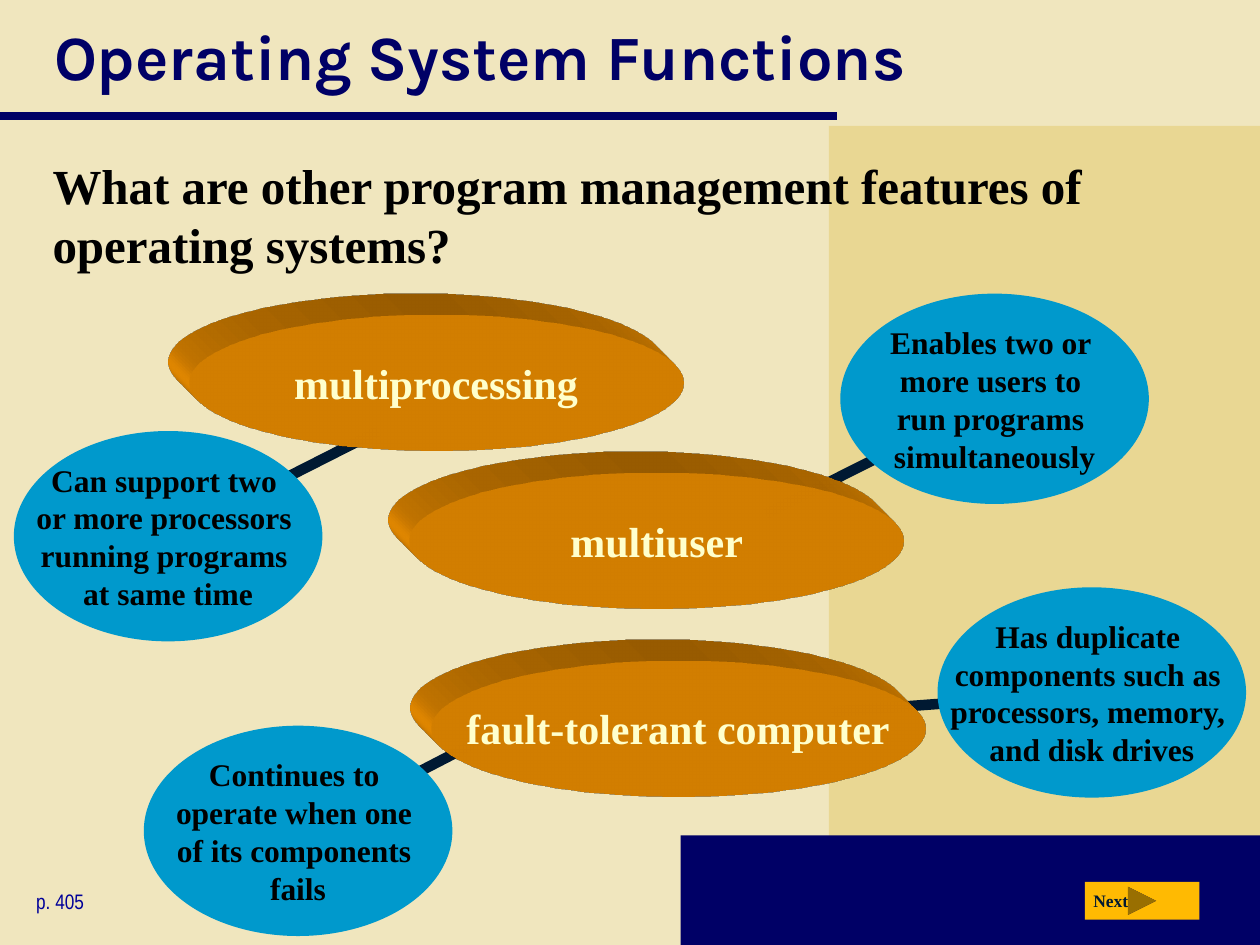
from dataclasses import dataclass

from lxml import etree
from pptx import Presentation
from pptx.dml.color import RGBColor
from pptx.enum.shapes import MSO_CONNECTOR, MSO_SHAPE
from pptx.enum.text import MSO_ANCHOR, PP_ALIGN
from pptx.oxml import parse_xml
from pptx.oxml.ns import qn
from pptx.util import Cm, Pt

RECTANGLE = MSO_SHAPE.RECTANGLE
ELLIPSE = MSO_SHAPE.OVAL
NEXT_BUTTON = MSO_SHAPE.ACTION_BUTTON_FORWARD_OR_NEXT
STRAIGHT = MSO_CONNECTOR.STRAIGHT
LEFT, CENTER = PP_ALIGN.LEFT, PP_ALIGN.CENTER
TOP, MIDDLE = MSO_ANCHOR.TOP, MSO_ANCHOR.MIDDLE

DRAWING = 'xmlns:a="http://schemas.openxmlformats.org/drawingml/2006/main"'
SCENE = f"""<a:scene3d {DRAWING}>
<a:camera prst="legacyObliqueTopLeft"/><a:lightRig rig="legacyFlat3" dir="b"/>
</a:scene3d>"""
EXTRUSION = """<a:sp3d {namespace} extrusionH="430200" prstMaterial="legacyMatte">
<a:bevelT w="13500" h="13500" prst="angle"/><a:bevelB w="13500" h="13500" prst="angle"/>
<a:extrusionClr><a:srgbClr val="{color}"/></a:extrusionClr></a:sp3d>"""


@dataclass(frozen=True)
class Theme:
    background: str = "F0E6BE"
    panel: str = "E9D793"
    navy: str = "000066"
    link: str = "001932"
    callout: str = "0099CC"
    feature: str = "FF9900"
    feature_text: str = "FFFFCC"
    button: str = "FFBA02"
    page: str = "000099"
    body: str = "000000"
    title_font: str = "Karla"
    body_font: str = "Times New Roman"
    page_font: str = "Arial Narrow"
    title_size: int = 36
    question_size: int = 28
    feature_size: int = 24
    callout_size: int = 18
    page_size: int = 12
    button_size: int = 10


THEME = Theme()


def write_text(shape, text, size, color=THEME.body, font=THEME.body_font, bold=True,
               align=LEFT, anchor=TOP, wrap=True, before=0.2):
    frame = shape.text_frame
    frame.word_wrap = wrap
    frame.vertical_anchor = anchor
    paragraph = frame.paragraphs[0]
    paragraph.text = text
    paragraph.alignment = align
    paragraph.space_before = Pt(size * before)
    for run in paragraph.runs:
        run.font.name = font
        run.font.size = Pt(size)
        run.font.bold = bold
        run.font.color.rgb = RGBColor.from_string(color)


class SlideBuilder:
    CALLOUT = (6.22, 4.24)
    FEATURE = (9.96, 2.74)

    def __init__(self, slide, theme):
        self.slide = slide
        self.theme = theme
        fill = slide.background.fill
        fill.solid()
        fill.fore_color.rgb = RGBColor.from_string(theme.background)

    def shape(self, kind, box, color):
        shape = self.slide.shapes.add_shape(kind, *map(Cm, box))
        shape.shadow.inherit = False
        shape.fill.solid()
        shape.fill.fore_color.rgb = RGBColor.from_string(color)
        shape.line.fill.background()
        return shape

    def line(self, start, end, color, width):
        connector = self.slide.shapes.add_connector(STRAIGHT, *map(Cm, start + end))
        connector.line.color.rgb = RGBColor.from_string(color)
        connector.line.width = Pt(width)
        etree.SubElement(connector.element.spPr, qn("a:effectLst"))

    def text(self, box, text, size, **style):
        shape = self.slide.shapes.add_textbox(*map(Cm, box))
        write_text(shape, text, size, **style)

    def callout(self, corner, text, start, end):
        self.line(start, end, self.theme.link, 6)
        shape = self.shape(ELLIPSE, corner + self.CALLOUT, self.theme.callout)
        write_text(shape, text, self.theme.callout_size,
                   align=CENTER, anchor=MIDDLE, wrap=False)

    def feature(self, corner, text):
        color = self.theme.feature
        shape = self.shape(ELLIPSE, corner + self.FEATURE, color)
        properties = shape.element.spPr
        properties.append(parse_xml(SCENE))
        properties.append(parse_xml(EXTRUSION.format(namespace=DRAWING, color=color)))
        write_text(shape, text, self.theme.feature_size, color=self.theme.feature_text,
                   align=CENTER, anchor=MIDDLE, wrap=False)


def main():
    presentation = Presentation()
    presentation.slide_width = Cm(25.4)
    presentation.slide_height = Cm(19.05)
    slide = presentation.slides.add_slide(presentation.slide_layouts[6])
    builder = SlideBuilder(slide, THEME)

    builder.shape(RECTANGLE, (16.71, 2.54, 8.69, 16.51), THEME.panel)
    builder.shape(RECTANGLE, (13.72, 16.84, 11.68, 2.21), THEME.navy)
    builder.line((0, 2.34), (16.87, 2.34), THEME.navy, 5)

    callouts = [
        ((18.9, 11.84), "Has duplicate \ncomponents such as \nprocessors, memory, \nand disk drives",
         (19.46, 14.15), (16.76, 14.35)),
        ((16.94, 5.92), "Enables two or \nmore users to \nrun programs \nsimultaneously",
         (18.36, 8.89), (15.44, 10.36)),
        ((2.9, 14.63), "Continues to \noperate when one \nof its components \nfails",
         (10.24, 14.63), (7.34, 16.13)),
        ((0.28, 8.69), "Can support two \nor more processors \nrunning programs \nat same time",
         (7.62, 8.69), (4.72, 10.16)),
    ]
    for callout in callouts:
        builder.callout(*callout)

    builder.text((0.84, 0, 23.85, 2.24), "Operating System Functions", THEME.title_size,
                 color=THEME.navy, font=THEME.title_font, anchor=MIDDLE, before=0)
    builder.text((0.81, 3.02, 23.85, 3.1),
                 "What are other program management features of operating systems?",
                 THEME.question_size)

    builder.shape(NEXT_BUTTON, (21.87, 17.78, 2.31, 0.76), THEME.button)
    builder.text((21.79, 17.81, 1.3, 0.69), "Next", THEME.button_size,
                 color=THEME.link, before=0.5)
    builder.text((0.48, 17.78, 4.29, 0.76), "p. 405", THEME.page_size,
                 color=THEME.page, font=THEME.page_font, bold=False, before=0.5)

    builder.feature((8.69, 13.31), "fault-tolerant computer")
    builder.feature((8.26, 9.53), "multiuser")
    builder.feature((3.81, 6.35), "multiprocessing")

    presentation.save("out.pptx")


if __name__ == "__main__":
    main()
